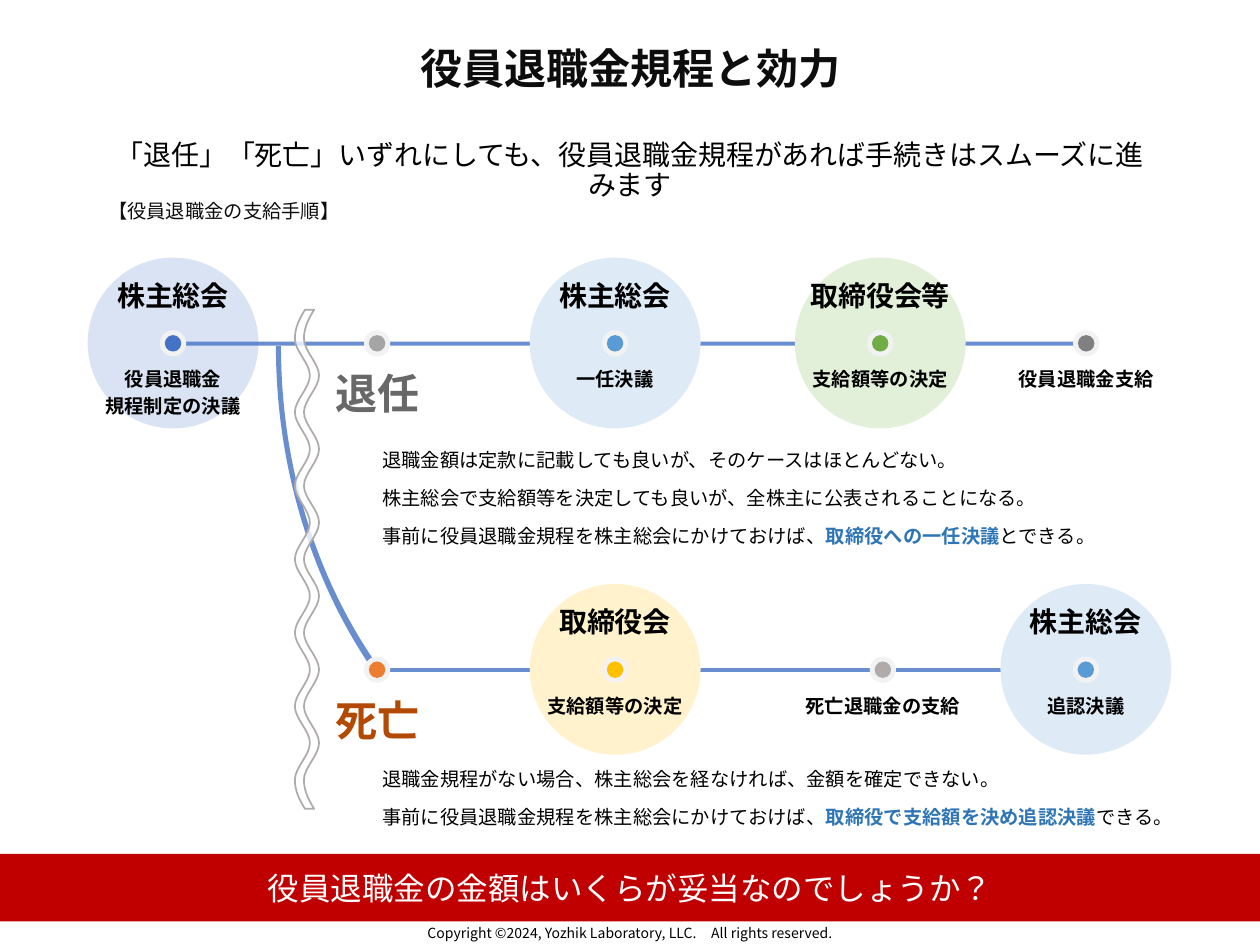
from dataclasses import dataclass

from lxml.etree import SubElement
from pptx import Presentation
from pptx.dml.color import RGBColor
from pptx.enum.lang import MSO_LANGUAGE_ID as Lang
from pptx.enum.shapes import MSO_SHAPE as Shape
from pptx.enum.text import MSO_ANCHOR as Anchor, MSO_AUTO_SIZE as Auto, PP_ALIGN as Align
from pptx.oxml.ns import qn
from pptx.util import Pt

FACE = "Noto Sans CJK JP"
BLACK = RGBColor(0, 0, 0)
INK = RGBColor(0x0D, 0x0D, 0x0D)
WHITE = RGBColor(255, 255, 255)
RED = RGBColor(0xC0, 0, 0)
BLUE = RGBColor(0x44, 0x72, 0xC4)
SKY = RGBColor(0x5B, 0x9B, 0xD5)
LINK = RGBColor(0x2E, 0x75, 0xB6)
GREEN = RGBColor(0x70, 0xAD, 0x47)
GOLD = RGBColor(0xFF, 0xC0, 0)
ORANGE = RGBColor(0xED, 0x7D, 0x31)
RUST = RGBColor(0xB2, 0x4A, 0x03)
STEEL = RGBColor(0x68, 0x68, 0x68)
GRAY = RGBColor(0xA5, 0xA5, 0xA5)
DARK = RGBColor(0x80, 0x80, 0x80)
WARM = RGBColor(0xAF, 0xAB, 0xAB)
RIM = RGBColor(0xF2, 0xF2, 0xF2)
PALE_BLUE = RGBColor(0xDA, 0xE3, 0xF3)
PALE_SKY = RGBColor(0xDE, 0xEB, 0xF7)
PALE_GREEN = RGBColor(0xE2, 0xF0, 0xD9)
PALE_GOLD = RGBColor(0xFF, 0xF2, 0xCC)

HALO, RING, DOT = 97.6, 15, 9.4
LABEL = 100.8


@dataclass
class Node:
    x: float
    dot: RGBColor
    label: str
    head: str = ""
    halo: RGBColor = None
    size: float = 11
    ink: RGBColor = BLACK


def style(run, size, ink, bold=False):
    font = run.font
    font.name, font.size, font.bold = FACE, Pt(size), bold
    font.color.rgb = ink
    font.language_id = Lang.JAPANESE
    SubElement(run._r.get_or_add_rPr(), qn("a:ea"), typeface=FACE)


def place(shape, box):
    shape.left, shape.top, shape.width, shape.height = map(Pt, box)


def write(shape, text, size, ink=BLACK, bold=False, align=Align.CENTER,
          anchor=Anchor.MIDDLE, pad=(7.2, 3.6), after=0, line=1.0):
    frame = shape.text_frame
    frame.text = text
    frame.word_wrap, frame.auto_size = True, Auto.NONE
    frame.vertical_anchor = anchor
    frame.margin_left = frame.margin_right = Pt(pad[0])
    frame.margin_top = frame.margin_bottom = Pt(pad[1])
    for para in frame.paragraphs:
        para.alignment, para.line_spacing = align, line
        para.space_before, para.space_after = Pt(0), Pt(after)
        for run in para.runs:
            style(run, size, ink, bold)


def text_box(slide, box, text, size, **look):
    write(slide.shapes.add_textbox(*map(Pt, box)), text, size, **look)


def paint(shape, fill, alpha=None):
    shape.shadow.inherit = False
    shape.fill.solid()
    shape.fill.fore_color.rgb = fill
    if alpha:
        color = next(shape.element.iter(qn("a:srgbClr")))
        SubElement(color, qn("a:alpha"), val=str(alpha * 1000))
    shape.line.fill.background()


def add_shape(slide, kind, box, fill, alpha=None):
    shape = slide.shapes.add_shape(kind, *map(Pt, box))
    paint(shape, fill, alpha)
    return shape


def disc(slide, x, y, size, fill):
    add_shape(slide, Shape.OVAL, (x - size / 2, y - size / 2, size, size), fill)


def outline(slide, left, top, start, steps, fill):
    """Closed outline; a step of one point is a line, of three a Bezier curve."""
    def spot(point):
        return Pt(left + point[0]), Pt(top + point[1])

    build = slide.shapes.build_freeform(*spot(start), scale=1.0)
    build.add_line_segments([spot(p) for step in steps for p in step], close=True)
    shape = build.convert_to_shape()
    lines = iter(list(shape.element.iter(qn("a:lnTo"))))
    for step in steps:
        first, *rest = [next(lines) for _ in step]
        if rest:
            first.tag = qn("a:cubicBezTo")
            for line in rest:
                first.append(line[0])
                line.getparent().remove(line)
    paint(shape, fill, 80)
    return shape


def branch(slide, left, top):
    """Tapering curve from the upper flow down to the lower one."""
    outline(slide, left, top, (0, 0), [
        [(2.9, 0)],
        [(2.9, 68.4), (23, 131), (56.2, 179.8)],
        [(60.5, 184.8)], [(55.4, 184.8)], [(54.7, 184.1)],
        [(20.9, 134.4), (0, 70), (0, 0)]], BLUE)


def wave(slide, left, top, width=8.6, band=5.2, lead=16.6, step=21, halves=12):
    """Wavy break mark between the rules and the events."""
    end = lead + step * halves
    knots = [(5.8, 0), (2.2, 5.8), (0, 10.8), (0, lead)]
    for i in range(halves):
        y = lead + i * step
        a, b = (0, width) if i % 2 == 0 else (width, 0)
        knots += [(a, y + step / 3), (b, y + step * 2 / 3), (b, y + step)]
    knots += [(0, end + 5.8), (2.2, end + 10.8), (5.8, end + lead)]
    far = [(x + band, y) for x, y in reversed(knots)]
    steps = [knots[i:i + 3] for i in range(1, len(knots), 3)]
    steps += [far[:1]] + [far[i:i + 3] for i in range(1, len(far), 3)]
    shape = outline(slide, left, top, knots[0], steps, WHITE)
    shape.line.color.rgb = WARM
    shape.line.width = Pt(1)


def flow(slide, y, start, end, nodes):
    """One row of steps on a line at height y."""
    def halos(part):
        for node in part:
            if node.halo:
                disc(slide, node.x, y - 0.2, HALO, node.halo)

    halos(nodes[:1])
    add_shape(slide, Shape.RECTANGLE, (start, y - 0.9, end - start, 2.2), BLUE, 80)
    halos(nodes[1:])
    look = dict(bold=True, anchor=Anchor.TOP, pad=(0, 0), after=2.2)
    for node in nodes:
        disc(slide, node.x, y, RING, RIM)
        disc(slide, node.x, y, DOT, node.dot)
        left = node.x - LABEL / 2
        rows = node.label.count("\n") + 1
        text_box(slide, (left, y + 13.9, LABEL, node.size * 1.25 * rows), node.label,
                 node.size, ink=node.ink, **look)
        if node.head:
            text_box(slide, (left, y - 37.1, LABEL, 19.4), node.head, 16, **look)


def notes(holder, box, lines):
    """List of remarks; text between bars is emphasised."""
    place(holder, box)
    write(holder, "\n".join([""] * len(lines)), 11, align=Align.LEFT, pad=(5.3, 2.9), line=0.9)
    for i, (para, text) in enumerate(zip(holder.text_frame.paragraphs, lines)):
        props = para._p.get_or_add_pPr()
        props.set("marL", "0")
        props.set("indent", "0")
        para.space_before = Pt(10 if i else 0)
        SubElement(props, qn("a:buNone"))
        for j, part in enumerate(text.split("|")):
            run = para.add_run()
            run.text = part
            style(run, 11, LINK if j % 2 else BLACK, bool(j % 2))


def header(slide):
    place(slide.shapes.title, (20, 23.8, 680.4, 29.5))
    write(slide.shapes.title, "役員退職金規程と効力", 24, INK, True)
    text_box(slide, (53.3, 77, 613.4, 21.6),
             "「退任」「死亡」いずれにしても、役員退職金規程があれば手続きはスムーズに進みます",
             16, anchor=Anchor.TOP, line=0.9)
    text_box(slide, (54.7, 105.8, 297.4, 29.5), "【役員退職金の支給手順】", 11,
             ink=INK, align=Align.LEFT)


def footer(slide):
    bar = add_shape(slide, Shape.RECTANGLE, (0, 488, 720, 38.6), RED)
    write(bar, "役員退職金の金額はいくらが妥当なのでしょうか？", 18, WHITE)
    text_box(slide, (130.3, 526, 459.4, 14),
             "Copyright ©2024, Yozhik Laboratory, LLC.　All rights reserved.", 8)


def main():
    deck = Presentation()
    deck.slide_width, deck.slide_height = Pt(720), Pt(540)
    slide = deck.slides.add_slide(deck.slide_layouts[3])
    header(slide)
    footer(slide)
    branch(slide, 157.7, 197.8)
    flow(slide, 196.2, 100, 615.6, [
        Node(98.9, BLUE, "役員退職金\n規程制定の決議", "株主総会", PALE_BLUE),
        Node(215.5, GRAY, "退任", size=24, ink=STEEL),
        Node(351.5, SKY, "一任決議", "株主総会", PALE_SKY),
        Node(503, GREEN, "支給額等の決定", "取締役会等", PALE_GREEN),
        Node(620.7, DARK, "役員退職金支給")])
    flow(slide, 382.7, 211, 625, [
        Node(215.5, ORANGE, "死亡", size=24, ink=RUST),
        Node(351.5, GOLD, "支給額等の決定", "取締役会", PALE_GOLD),
        Node(504.5, WARM, "死亡退職金の支給"),
        Node(620.5, SKY, "追認決議", "株主総会", PALE_SKY)])
    wave(slide, 168.5, 177)
    notes(slide.placeholders[1], (213.1, 249.3, 457.2, 72), [
        "退職金額は定款に記載しても良いが、そのケースはほとんどない。",
        "株主総会で支給額等を決定しても良いが、全株主に公表されることになる。",
        "事前に役員退職金規程を株主総会にかけておけば、|取締役への一任決議|とできる。"])
    notes(slide.placeholders[2], (213.1, 428, 457.2, 57.6), [
        "退職金規程がない場合、株主総会を経なければ、金額を確定できない。",
        "事前に役員退職金規程を株主総会にかけておけば、|取締役で支給額を決め追認決議|できる。"])
    deck.save("out.pptx")


if __name__ == "__main__":
    main()
